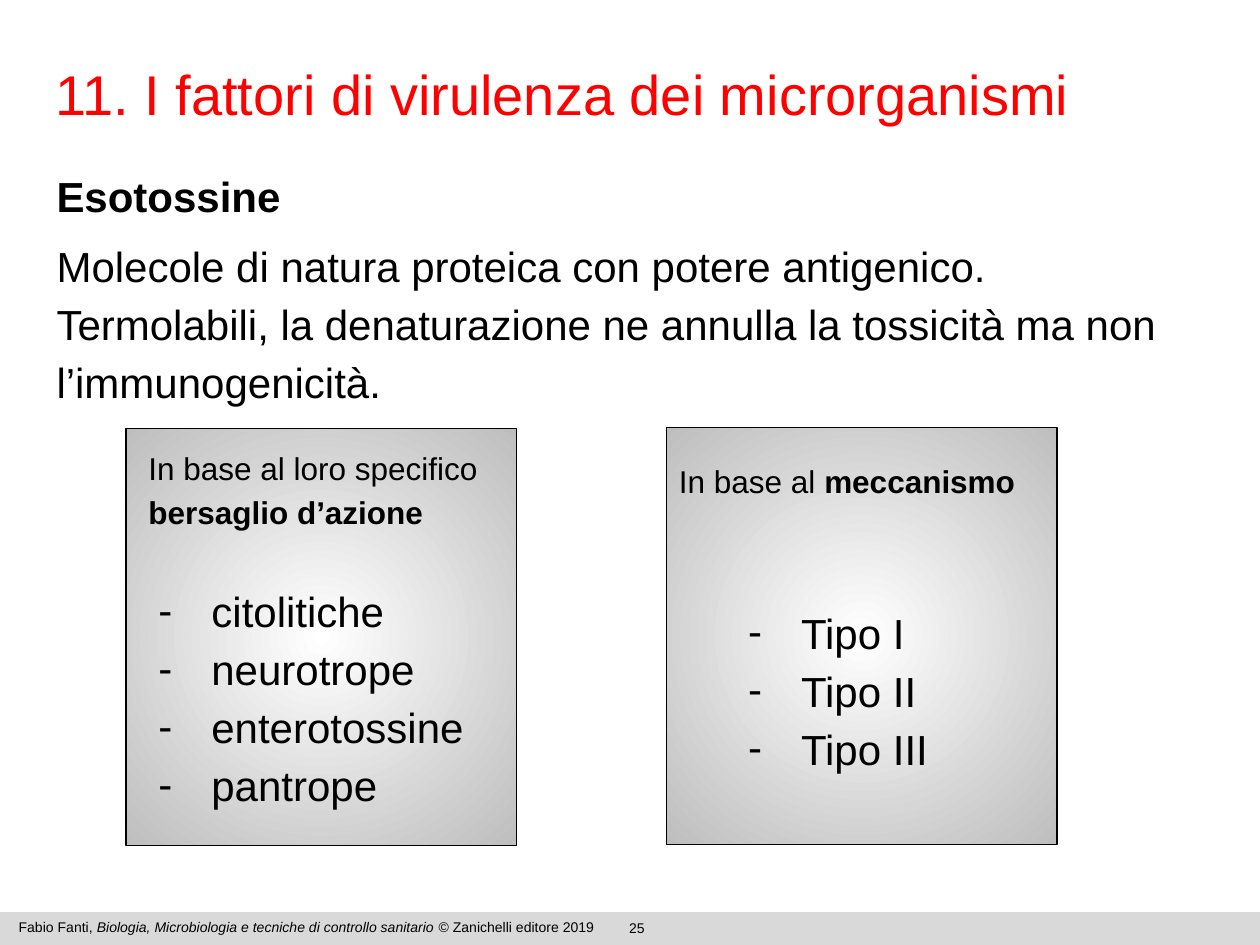
"""Build the slide on exotoxins and microbial virulence factors."""
from lxml.etree import SubElement
from pptx import Presentation
from pptx.dml.color import RGBColor
from pptx.enum.shapes import MSO_SHAPE
from pptx.enum.text import MSO_ANCHOR, MSO_AUTO_SIZE, PP_ALIGN
from pptx.oxml.ns import qn
from pptx.util import Inches, Pt

COLORS = {
    "black": "000000",
    "white": "FFFFFF",
    "red": "FF0000",
    "bar": "D9D9D9",
    "edge": "BEBEBE",
}
FONT = "Arial"
BODY_INSETS = (0.1, 0.1)
FOOTER_INSETS = (0.1, 0.05)


def rgb(name):
    return RGBColor.from_string(COLORS[name])


class SlideBuilder:
    def __init__(self, prs):
        self.slide = prs.slides.add_slide(prs.slide_layouts[5])
        self.shapes = self.slide.shapes

    def style(self, sp, paragraphs, size, color="black", insets=BODY_INSETS,
              spacing=1.15, align=PP_ALIGN.LEFT, bullet=None):
        tf = sp.text_frame
        tf.word_wrap = True
        tf.auto_size = MSO_AUTO_SIZE.NONE
        tf.vertical_anchor = MSO_ANCHOR.TOP
        tf.margin_left = tf.margin_right = Inches(insets[0])
        tf.margin_top = tf.margin_bottom = Inches(insets[1])
        for i, runs in enumerate(paragraphs):
            p = tf.add_paragraph() if i else tf.paragraphs[0]
            p.alignment = align
            p.line_spacing = spacing
            if bullet:
                self.bullet(p, bullet)
            for text, emphasis in runs:
                r = p.add_run()
                r.text = text
                r.font.name = FONT
                r.font.size = Pt(size)
                r.font.bold = emphasis == "bold"
                r.font.italic = emphasis == "italic"
                r.font.color.rgb = rgb(color)

    def bullet(self, p, char):
        pPr = p._p.get_or_add_pPr()
        pPr.set("marL", str(Inches(0.5)))
        pPr.set("indent", str(Inches(-0.42)))
        buClr = SubElement(pPr, qn("a:buClr"))
        SubElement(buClr, qn("a:srgbClr"), val=COLORS["black"])
        SubElement(pPr, qn("a:buFont"), typeface=FONT)
        SubElement(pPr, qn("a:buChar"), char=char)

    def title(self, box, text):
        sp = self.shapes.title
        sp.left, sp.top, sp.width, sp.height = map(Inches, box)
        self.style(sp, [[(text, None)]], 32, "red", (0.09, 0.05), 1.0)

    def text(self, box, paragraphs, size, shapes=None, **options):
        sp = (shapes or self.shapes).add_textbox(*map(Inches, box))
        self.style(sp, paragraphs, size, **options)

    def rect(self, box, fill, line=None, shapes=None):
        sp = (shapes or self.shapes).add_shape(MSO_SHAPE.RECTANGLE, *map(Inches, box))
        sp.shadow.inherit = False
        sp.fill.solid()
        sp.fill.fore_color.rgb = rgb(fill)
        if line:
            sp.line.color.rgb = rgb(line)
            sp.line.width = Pt(0.75)
        else:
            sp.line.fill.background()
        return sp

    def radial(self, sp, inner, outer):
        sp.fill.gradient()
        for stop, name, position in zip(sp.fill.gradient_stops, (inner, outer), (0, 1)):
            stop.color.rgb = rgb(name)
            stop.position = position
        grad = sp._element.spPr.find(qn("a:gradFill"))
        grad.remove(grad.find(qn("a:lin")))
        circle = SubElement(grad, qn("a:path"), path="circle")
        SubElement(circle, qn("a:fillToRect"), l="50000", t="50000", r="50000", b="50000")

    def card(self, left, top, heading_box, heading, list_box, items):
        shapes = self.shapes.add_group_shape().shapes
        sp = self.rect((left, top, 3.1, 3.31), "white", "black", shapes)
        self.radial(sp, "white", "edge")
        self.text(heading_box, [heading], 18, shapes)
        self.text(list_box, [[(item, None)] for item in items], 24, shapes, bullet="-")


def main():
    prs = Presentation()
    prs.slide_width, prs.slide_height = Inches(10), Inches(7.5)
    s = SlideBuilder(prs)

    s.rect((0, 7.24, 10, 0.26), "bar")
    s.text((3.94, 7.25, 2.23, 0.17), [[("25", None)]], 8,
           insets=FOOTER_INSETS, spacing=1.0, align=PP_ALIGN.CENTER)
    s.text((0.05, 7.24, 5.04, 0.24), [[
        ("Fabio Fanti, ", None),
        ("Biologia, Microbiologia e tecniche di controllo sanitario", "italic"),
        (" © Zanichelli editore 2019", None),
    ]], 8, insets=FOOTER_INSETS, spacing=1.0)

    s.title((0.35, 0.42, 9.65, 0.97), "11. I fattori di virulenza dei microrganismi")
    s.text((0.35, 1.19, 6.18, 0.56), [[("Esotossine", "bold")]], 24)
    s.text((0.35, 1.75, 9.11, 1.54), [[(
        "Molecole di natura proteica con potere antigenico. Termolabili, la "
        "denaturazione ne annulla la tossicità ma non l’immunogenicità.", None)]], 24)

    s.card(1, 3.4, (1.08, 3.42, 3.1, 0.94),
           [("In base al loro specifico ", None), ("bersaglio d’azione", "bold")],
           (1.08, 4.49, 3.1, 2.06),
           ["citolitiche", "neurotrope", "enterotossine", "pantrope"])
    s.card(5.29, 3.39, (5.29, 3.52, 3.1, 0.94),
           [("In base al ", None), ("meccanismo", "bold")],
           (5.76, 4.66, 2.17, 2.06),
           ["Tipo I", "Tipo II", "Tipo III"])

    prs.save("out.pptx")


if __name__ == "__main__":
    main()
